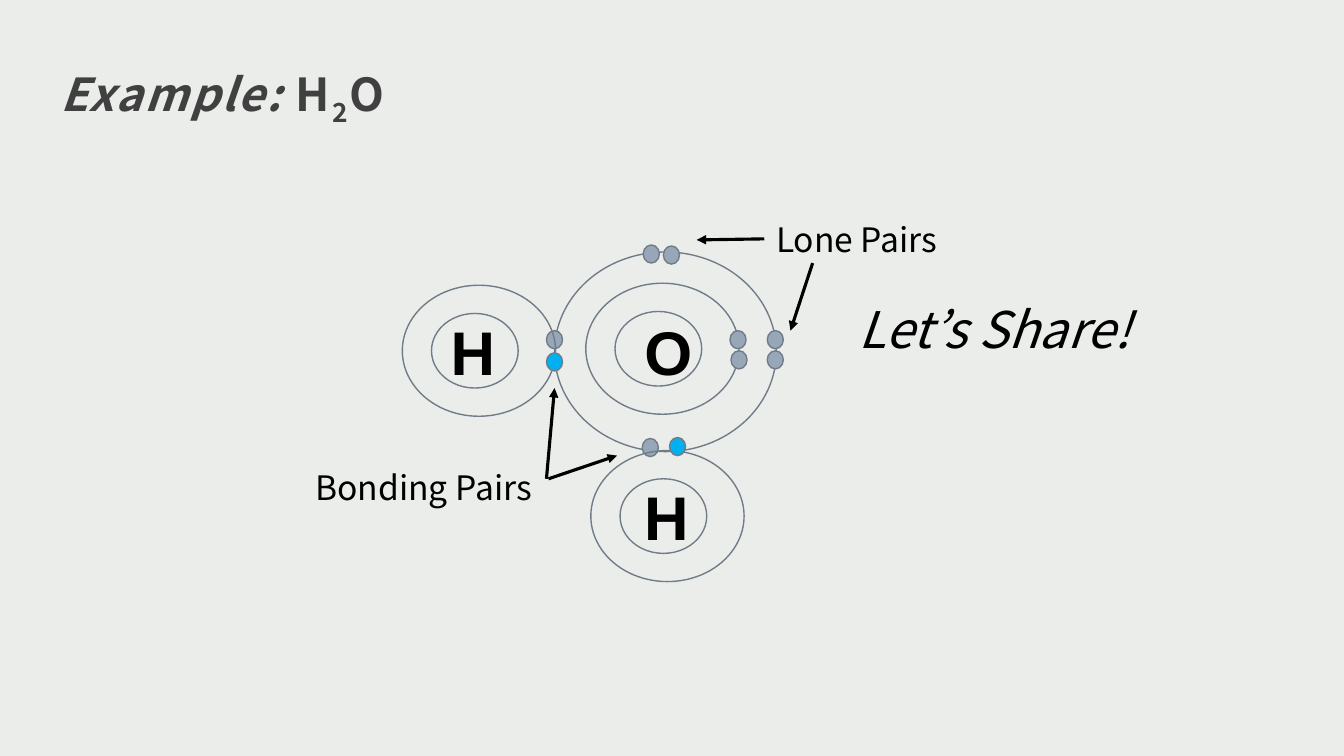
from lxml import etree
from pptx import Presentation
from pptx.dml.color import RGBColor
from pptx.enum.shapes import MSO_CONNECTOR, MSO_SHAPE
from pptx.enum.text import MSO_ANCHOR, PP_ALIGN
from pptx.oxml.ns import qn
from pptx.util import Inches, Pt

COLORS = {
    "background": "EBEDEB", "title": "404040", "text": "000000",
    "orbit": "707C88", "oxygen": "97A7B8", "hydrogen": "00B0F0",
}
BODY_FONT = "Noto Sans CJK JP"
SLIDE_SIZE = (13.33, 7.5)
NUCLEUS, INNER, OUTER = (0.86, 0.74), (1.52, 1.3), (2.2, 1.98)
ELECTRON = (0.16, 0.18)
LETTER_BOX = (0.8, 0.8)

OXYGEN_ORBITS = [((6.53, 3.46), NUCLEUS), ((6.57, 3.46), INNER), ((6.6, 3.49), OUTER)]
HYDROGEN_ORBITS = [
    ((4.71, 3.48), NUCLEUS), ((4.75, 3.48), INNER),
    ((6.58, 5.12), NUCLEUS), ((6.62, 5.12), INNER),
]
OXYGEN_ELECTRONS = [
    (7.32, 3.37), (7.33, 3.57), (7.69, 3.37), (7.69, 3.57),
    (6.46, 2.52), (6.66, 2.53), (5.5, 3.37), (6.45, 4.44),
]
HYDROGEN_ELECTRONS = [(5.5, 3.59), (6.72, 4.43)]
ATOMS = [("H", (4.69, 3.48)), ("O", (6.63, 3.48)), ("H", (6.61, 5.12))]
LABELS = [
    ("Let’s Share!", (8.42, 2.91, 3.44, 0.71), 36, True),
    ("Bonding Pairs", (3.03, 4.58, 2.65, 0.5), 24, False),
    ("Lone Pairs", (7.6, 2.12, 2.37, 0.5), 24, False),
]
ARROWS = [
    ((5.42, 4.75), (5.5, 3.85)), ((5.44, 4.75), (6.12, 4.52)),
    ((8.06, 2.61), (7.84, 3.28)), ((7.58, 2.37), (6.91, 2.38)),
]
TITLE_BOX = (0.48, 0.21, 3.73, 1.18)
TITLE_RUNS = [("Example: ", True, 0), ("H", False, 0), ("2", False, -25000), ("O", False, 0)]


def color(name):
    return RGBColor.from_string(COLORS[name])


def centered(center, size):
    return (center[0] - size[0] / 2, center[1] - size[1] / 2, *size)


def add_ellipse(slide, center, size, fill=None):
    box = map(Inches, centered(center, size))
    shape = slide.shapes.add_shape(MSO_SHAPE.OVAL, *box)
    shape.shadow.inherit = False
    shape.line.color.rgb = color("orbit")
    shape.line.width = Pt(1)
    if fill:
        shape.fill.solid()
        shape.fill.fore_color.rgb = color(fill)
    else:
        shape.fill.background()


def add_text(slide, text, box, size, font=BODY_FONT, ink="text"):
    frame = slide.shapes.add_textbox(*map(Inches, box)).text_frame
    frame.word_wrap = True
    paragraph = frame.paragraphs[0]
    paragraph.text = text
    paragraph.font.name = font
    paragraph.font.size = Pt(size)
    paragraph.font.color.rgb = color(ink)
    return frame, paragraph


def add_atom(slide, symbol, center):
    frame, paragraph = add_text(slide, symbol, centered(center, LETTER_BOX), 44, "Arial")
    frame.margin_left = frame.margin_right = frame.margin_top = frame.margin_bottom = 0
    frame.vertical_anchor = MSO_ANCHOR.MIDDLE
    paragraph.alignment = PP_ALIGN.CENTER
    paragraph.font.bold = True


def add_arrow(slide, start, end):
    arrow = slide.shapes.add_connector(MSO_CONNECTOR.STRAIGHT, *map(Inches, start + end))
    arrow.line.color.rgb = color("text")
    arrow.line.width = Pt(2.25)
    etree.SubElement(arrow.line._get_or_add_ln(), qn("a:tailEnd"), type="triangle")
    etree.SubElement(arrow._element.spPr, qn("a:effectLst"))


def add_title(slide):
    frame, paragraph = add_text(slide, "", TITLE_BOX, 32.4, ink="title")
    frame.margin_left = frame.margin_right = frame.margin_top = Inches(0.12)
    frame.margin_bottom = Inches(0.1)
    frame.vertical_anchor = MSO_ANCHOR.MIDDLE
    paragraph.line_spacing = 1.5
    paragraph.font.bold = True
    for text, italic, baseline in TITLE_RUNS:
        run = paragraph.add_run()
        run.text = text
        run.font.italic = italic
        properties = run._r.get_or_add_rPr()
        properties.set("spc", "150")
        if baseline:
            properties.set("baseline", str(baseline))


def main():
    presentation = Presentation()
    presentation.slide_width, presentation.slide_height = map(Inches, SLIDE_SIZE)
    slide = presentation.slides.add_slide(presentation.slide_layouts[6])
    slide.background.fill.solid()
    slide.background.fill.fore_color.rgb = color("background")

    for symbol, center in ATOMS:
        add_atom(slide, symbol, center)
    for orbits, electrons, fill in (
        (OXYGEN_ORBITS, OXYGEN_ELECTRONS, "oxygen"),
        (HYDROGEN_ORBITS, HYDROGEN_ELECTRONS, "hydrogen"),
    ):
        for center, size in orbits:
            add_ellipse(slide, center, size)
        for center in electrons:
            add_ellipse(slide, center, ELECTRON, fill)
    for text, box, size, italic in LABELS:
        paragraph = add_text(slide, text, box, size)[1]
        paragraph.font.italic = italic
    for start, end in ARROWS:
        add_arrow(slide, start, end)
    add_title(slide)
    presentation.save("out.pptx")


if __name__ == "__main__":
    main()
